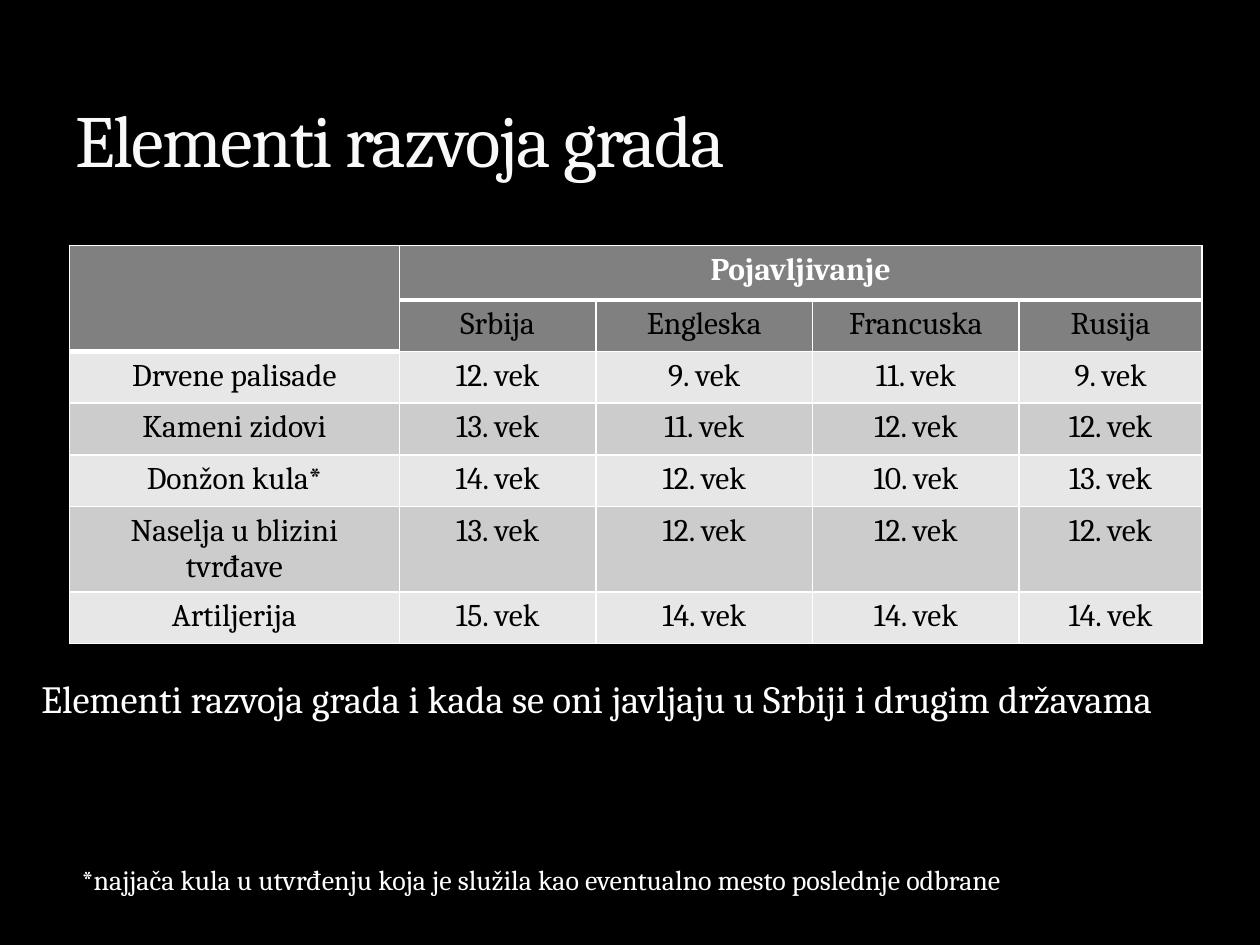
from pptx import Presentation
from pptx.dml.color import RGBColor
from pptx.enum.text import MSO_ANCHOR, MSO_AUTO_SIZE, PP_ALIGN
from pptx.oxml import parse_xml
from pptx.oxml.ns import nsdecls
from pptx.util import Inches, Pt

BOTTOM = MSO_ANCHOR.BOTTOM
GROW = MSO_AUTO_SIZE.SHAPE_TO_FIT_TEXT
NO_FIT = MSO_AUTO_SIZE.NONE
CENTER = PP_ALIGN.CENTER
LEFT = PP_ALIGN.LEFT
TITLE_ONLY = 5

BLACK, WHITE, TITLE_COLOR = "000000", "FFFFFF", "F9F9F9"
HEADER_FILL = "808080"
BAND_FILLS = ("E7E7E7", "CCCCCC")
HEADER_ROWS = 2
THIN, THICK = 1, 3

COLUMN_WIDTHS = (2.62, 1.56, 1.72, 1.64, 1.45)
ROW_HEIGHTS = (0.43,) + (0.41,) * 6
ROWS = (
    ("", "Pojavljivanje", "", "", ""),
    ("", "Srbija", "Engleska", "Francuska", "Rusija"),
    ("Drvene palisade", "12. vek", "9. vek", "11. vek", "9. vek"),
    ("Kameni zidovi", "13. vek", "11. vek", "12. vek", "12. vek"),
    ("Donžon kula*", "14. vek", "12. vek", "10. vek", "13. vek"),
    ("Naselja u blizini tvrđave", "13. vek", "12. vek", "12. vek", "12. vek"),
    ("Artiljerija", "15. vek", "14. vek", "14. vek", "14. vek"),
)


def rgb(color):
    return RGBColor.from_string(color)


def set_borders(cell, color, widths):
    """Draw the cell's sides; widths maps L, R, T and B to points."""
    properties = cell._tc.get_or_add_tcPr()
    for side, width in widths.items():
        properties.append(parse_xml(
            f'<a:ln{side} {nsdecls("a")} w="{Pt(width)}"><a:solidFill>'
            f'<a:srgbClr val="{color}"/></a:solidFill></a:ln{side}>'))


class SlideBuilder:
    def __init__(self, slide, font):
        self.slide = slide
        self.font = font

    def background(self, color):
        fill = self.slide.background.fill
        fill.solid()
        fill.fore_color.rgb = rgb(color)

    def add_run(self, paragraph, text, size, color, bold=False):
        run = paragraph.add_run()
        run.text = text
        run.font.name = self.font
        run.font.size = Pt(size)
        run.font.bold = bold
        run.font.color.rgb = rgb(color)
        return run

    def title(self, text, left, top, width, height):
        title = self.slide.shapes.title
        title.left, title.top = Inches(left), Inches(top)
        title.width, title.height = Inches(width), Inches(height)
        frame = title.text_frame
        frame.vertical_anchor = BOTTOM
        frame.auto_size = NO_FIT
        paragraph = frame.paragraphs[0]
        paragraph.alignment = LEFT
        run = self.add_run(paragraph, text, 42, TITLE_COLOR)
        run.font._element.set("spc", "-100")

    def text(self, text, left, top, width, height, size):
        box = self.slide.shapes.add_textbox(
            Inches(left), Inches(top), Inches(width), Inches(height))
        frame = box.text_frame
        frame.word_wrap = False
        frame.auto_size = GROW
        self.add_run(frame.paragraphs[0], text, size, WHITE)

    def table(self, rows, left, top):
        table = self.slide.shapes.add_table(
            len(rows), len(COLUMN_WIDTHS), Inches(left), Inches(top),
            Inches(sum(COLUMN_WIDTHS)), Inches(sum(ROW_HEIGHTS))).table
        for column, width in zip(table.columns, COLUMN_WIDTHS):
            column.width = Inches(width)
        for row, height in zip(table.rows, ROW_HEIGHTS):
            row.height = Inches(height)
        table.cell(0, 0).merge(table.cell(1, 0))
        table.cell(0, 1).merge(table.cell(0, len(COLUMN_WIDTHS) - 1))
        for row_index, texts in enumerate(rows):
            for column_index, text in enumerate(texts):
                self.table_cell(table, row_index, column_index, text)

    def table_cell(self, table, row, column, text):
        cell = table.cell(row, column)
        # A thick rule closes the corner cell and the heading beside it.
        rule_row = 2 if column == 0 else 1
        set_borders(cell, WHITE, {
            "L": THIN,
            "R": THIN,
            "T": THICK if row == rule_row else THIN,
            "B": THICK if row < rule_row else THIN,
        })
        cell.fill.solid()
        is_header = row < HEADER_ROWS
        fill = HEADER_FILL if is_header else BAND_FILLS[row % 2]
        cell.fill.fore_color.rgb = rgb(fill)
        if text:
            paragraph = cell.text_frame.paragraphs[0]
            paragraph.alignment = CENTER
            is_top = row == 0
            self.add_run(paragraph, text, 18, WHITE if is_top else BLACK, is_top)


def main():
    presentation = Presentation()
    presentation.slide_width = Inches(10)
    presentation.slide_height = Inches(7.5)
    slide = presentation.slides.add_slide(presentation.slide_layouts[TITLE_ONLY])
    builder = SlideBuilder(slide, "Cambria")
    builder.background(BLACK)
    builder.title("Elementi razvoja grada", 0.5, 0.17, 9, 1.33)
    builder.table(ROWS, 0.55, 1.95)
    builder.text("Elementi razvoja grada i kada se oni javljaju u Srbiji i drugim državama",
                 0.23, 5.31, 9.52, 0.47, 22)
    builder.text("*najjača kula u utvrđenju koja je služila kao eventualno mesto poslednje odbrane",
                 0.55, 6.8, 7.95, 0.37, 16)
    presentation.save("out.pptx")


if __name__ == "__main__":
    main()
